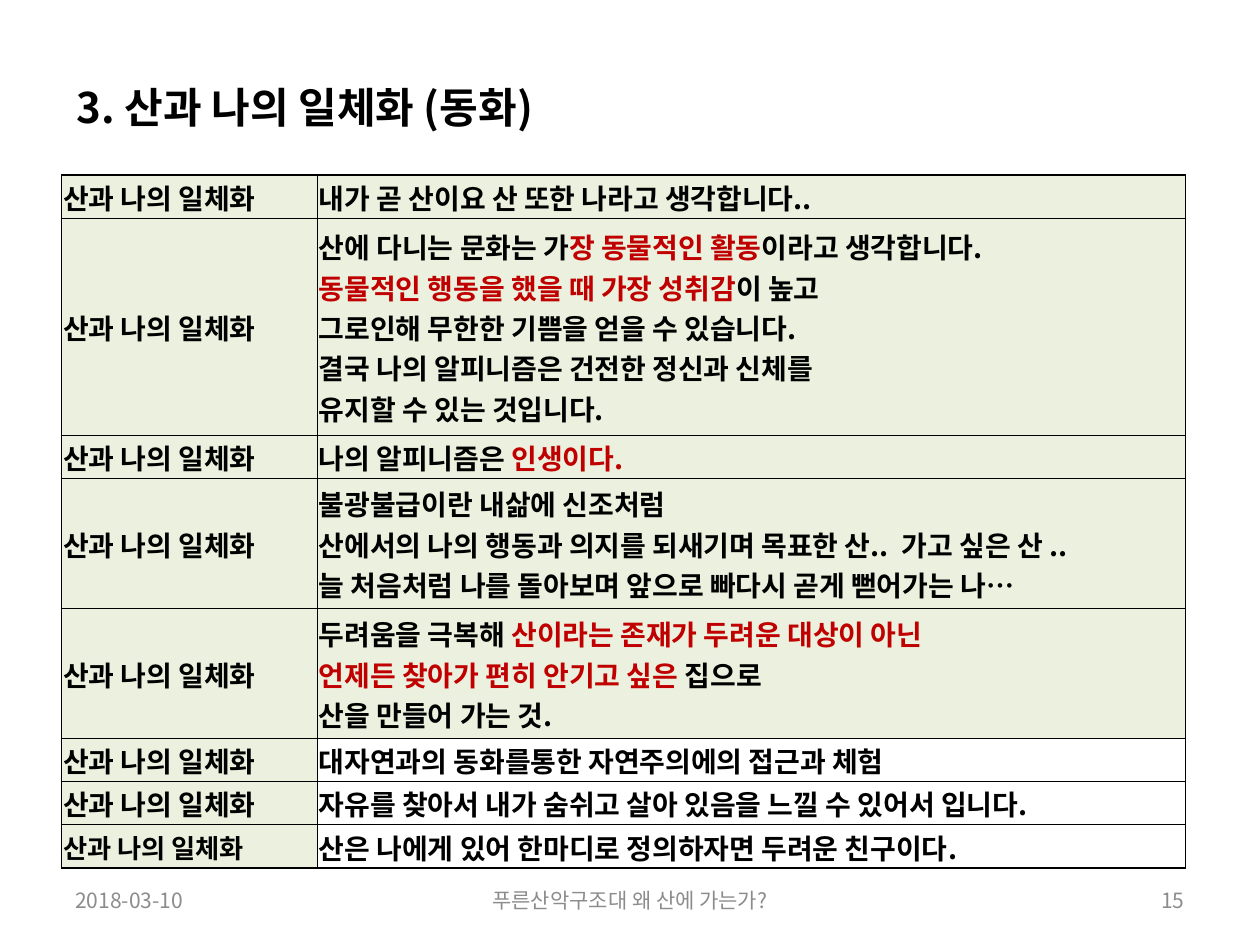
from lxml.etree import SubElement
from pptx import Presentation
from pptx.dml.color import RGBColor
from pptx.enum.text import MSO_ANCHOR as Anchor, PP_ALIGN as Align
from pptx.oxml.ns import qn
from pptx.util import Cm, Pt

FONT = "Noto Sans CJK KR"
BLACK, RED, GRAY, GREEN = "000000", "C00000", "8C8C8C", "EBF1DE"
LABEL = "산과 나의 일체화"
COLUMN_WIDTHS = (5.16, 17.5)
ROWS = [
    (0.87, 16, GREEN, "내가 곧 산이요 산 또한 나라고 생각합니다.."),
    (4.37, 16, GREEN, "산에 다니는 문화는 가*장 동물적인 활동*이라고 생각합니다.\n"
                      "*동물적인 행동을 했을 때 가장 성취감*이 높고\n"
                      "그로인해 무한한 기쁨을 얻을 수 있습니다.\n"
                      "결국 나의 알피니즘은 건전한 정신과 신체를\n"
                      "유지할 수 있는 것입니다."),
    (0.87, 16, GREEN, "나의 알피니즘은 *인생이다.*"),
    (2.62, 16, GREEN, "불광불급이란 내삶에 신조처럼\n"
                      "산에서의 나의 행동과 의지를 되새기며 목표한 산..  가고 싶은 산 ..\n"
                      "늘 처음처럼 나를 돌아보며 앞으로 빠다시 곧게 뻗어가는 나…"),
    (2.62, 16, GREEN, "두려움을 극복해 *산이라는 존재가 두려운 대상이 아닌*\n"
                      "*언제든 찾아가 편히 안기고 싶은* 집으로\n"
                      "산을 만들어 가는 것."),
    (0.87, 16, None, "대자연과의 동화를통한 자연주의에의 접근과 체험"),
    (0.87, 16, None, "자유를 찾아서 내가 숨쉬고 살아 있음을 느낄 수 있어서 입니다."),
    (0.88, 15, None, "산은 나에게 있어 한마디로 정의하자면 두려운 친구이다."),
]


def color(value):
    """Turn a hex string into a colour."""
    return RGBColor.from_string(value)


def style_para(para, size, ink, bold=False):
    """Set the font of a whole paragraph, for Latin and Korean letters."""
    font = para.font
    font.name, font.size, font.bold = FONT, Pt(size), bold
    font.color.rgb = color(ink)
    defaults = para._p.pPr.find(qn("a:defRPr"))
    SubElement(defaults, qn("a:ea"), typeface=FONT)


def write_marked(para, text):
    """Write lines of text, with the parts between asterisks in red."""
    for number, line in enumerate(text.split("\n")):
        if number:
            para.add_line_break()
        for position, piece in enumerate(line.split("*")):
            if piece:
                span = para.add_run()
                span.text = piece
                if position % 2:
                    span.font.color.rgb = color(RED)


def add_text(slide, frame, text, size, ink, align=Align.LEFT, bold=False, anchor=Anchor.MIDDLE):
    """Add a text box with one paragraph."""
    box = slide.shapes.add_textbox(*map(Cm, frame))
    box.text_frame.word_wrap = True
    box.text_frame.vertical_anchor = anchor
    para = box.text_frame.paragraphs[0]
    para.text, para.alignment = text, align
    style_para(para, size, ink, bold)


def set_borders(cell, widths):
    """Draw the left, right, top and bottom borders of a cell."""
    properties = cell._tc.get_or_add_tcPr()
    for side, width in zip("LRTB", widths):
        line = SubElement(properties, qn(f"a:ln{side}"), w=str(Pt(width)))
        fill = SubElement(line, qn("a:solidFill"))
        SubElement(fill, qn("a:srgbClr"), val=BLACK)


def fill_cell(cell, text, size, background, borders):
    """Give a cell its text, margins, borders and fill."""
    cell.margin_left = cell.margin_right = cell.margin_top = Cm(0.03)
    cell.margin_bottom = Cm(0)
    cell.vertical_anchor = Anchor.MIDDLE
    para = cell.text_frame.paragraphs[0]
    write_marked(para, text)
    style_para(para, size, BLACK, bold=True)
    set_borders(cell, borders)
    if background:
        cell.fill.solid()
        cell.fill.fore_color.rgb = color(background)
    else:
        cell.fill.background()


def add_answers(slide):
    """Add the table of answers with a heavier outer border."""
    height = sum(row[0] for row in ROWS)
    frame = (1.24, 3.53, sum(COLUMN_WIDTHS), height)
    table = slide.shapes.add_table(len(ROWS), 2, *map(Cm, frame)).table
    table.first_row = table.horz_banding = False
    for column, width in zip(table.columns, COLUMN_WIDTHS):
        column.width = Cm(width)
    last = len(ROWS) - 1
    for index, (height, label_size, background, answer) in enumerate(ROWS):
        table.rows[index].height = Cm(height)
        top = 1 if index == 0 else 0.5
        bottom = 1 if index == last else 0.5
        fill_cell(table.cell(index, 0), LABEL, label_size, GREEN, (1, 0.5, top, bottom))
        fill_cell(table.cell(index, 1), answer, 16, background, (0.5, 1, top, bottom))


def main():
    """Build the slide and save it."""
    deck = Presentation()
    deck.slide_width, deck.slide_height = Cm(25.4), Cm(19.05)
    slide = deck.slides.add_slide(deck.slide_layouts[6])
    footers = [
        (1.27, 5.92, "2018-03-10", Align.LEFT),
        (8.68, 8.04, "푸른산악구조대 왜 산에 가는가?", Align.CENTER),
        (18.2, 5.93, "15", Align.RIGHT),
    ]
    for left, width, text, align in footers:
        add_text(slide, (left, 17.65, width, 1.01), text, 12, GRAY, align)
    add_answers(slide)
    add_text(slide, (1.3, 1.52, 19.2, 1.28), "3. 산과 나의 일체화 (동화)", 24, BLACK,
             bold=True, anchor=Anchor.TOP)
    deck.save("out.pptx")


if __name__ == "__main__":
    main()
